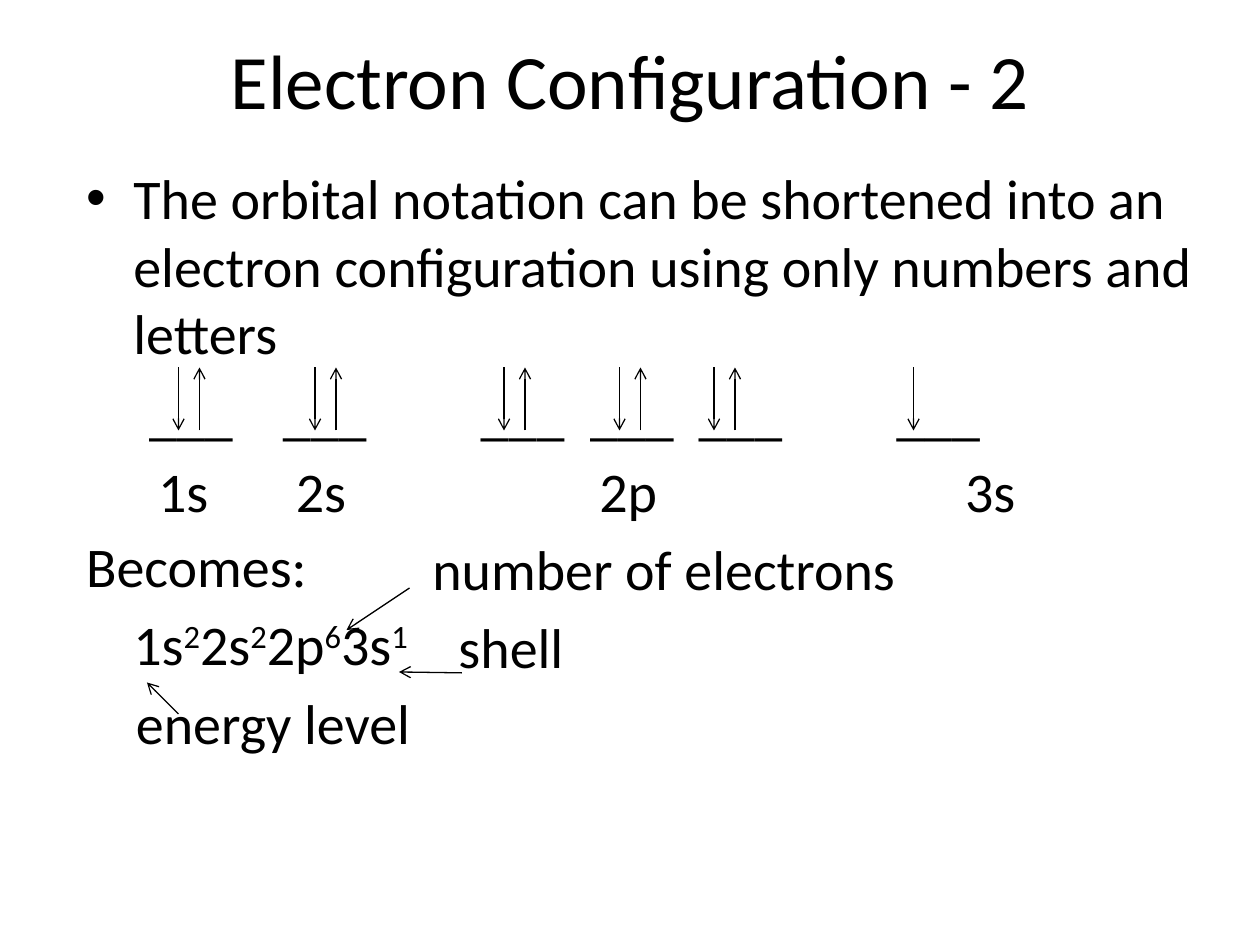
from dataclasses import dataclass

from lxml.etree import SubElement
from pptx import Presentation
from pptx.dml.color import RGBColor
from pptx.enum.shapes import MSO_CONNECTOR
from pptx.enum.text import MSO_AUTO_SIZE
from pptx.oxml.ns import qn
from pptx.util import Pt


@dataclass(frozen=True)
class Theme:
    font: str = "Calibri"
    ink: RGBColor = RGBColor(0, 0, 0)
    title: Pt = Pt(44)
    body: Pt = Pt(32)
    line: Pt = Pt(0.75)


theme = Theme()


def add_run(p, text, size, superscript=False):
    r = p.add_run()
    r.text = text
    r.font.name = theme.font
    r.font.size = size
    r.font.color.rgb = theme.ink
    if superscript:
        r._r.get_or_add_rPr().set("baseline", "30000")


def add_arrow(shapes, x1, y1, x2, y2):
    sp = shapes.add_connector(MSO_CONNECTOR.STRAIGHT, Pt(x1), Pt(y1), Pt(x2), Pt(y2))
    sp.line.color.rgb = theme.ink
    sp.line.width = theme.line
    SubElement(sp.line._get_or_add_ln(), qn("a:tailEnd"), type="arrow")
    SubElement(sp._element.spPr, qn("a:effectLst"))


prs = Presentation()
prs.slide_width, prs.slide_height = Pt(720), Pt(540)
s = prs.slides.add_slide(prs.slide_layouts[1])

title = s.shapes.title
title.left, title.top, title.width, title.height = Pt(36), Pt(0), Pt(648), Pt(90)
add_run(title.text_frame.paragraphs[0], "Electron Configuration - 2", theme.title)

body = s.placeholders[1]
body.left, body.top, body.width, body.height = Pt(42), Pt(90), Pt(648), Pt(438)
tf = body.text_frame
tf.auto_size = MSO_AUTO_SIZE.NONE
add_run(
    tf.paragraphs[0],
    "The orbital notation can be shortened into an electron configuration "
    "using only numbers and letters",
    theme.body,
)

diagram_gap = 94.7
body_lines = [
    (0, diagram_gap, ["Becomes:"]),
    (27, None, ["1s", "2", "2s", "2", "2p", "6", "3s", "1"]),
    (28.5, None, ["energy level"]),
]
for margin, space_before, parts in body_lines:
    p = tf.add_paragraph()
    if space_before:
        p.space_before = Pt(space_before)
    pPr = p._p.get_or_add_pPr()
    pPr.set("marL", str(Pt(margin)))
    pPr.set("indent", "0")
    SubElement(pPr, qn("a:buNone"))
    for i, part in enumerate(parts):
        add_run(p, part, theme.body, superscript=i % 2 == 1)

first_row, row_pitch = 216.3, 44.6
blanks = [(x, 0, 60, "___") for x in (85.2, 161.7, 274.7, 337.2, 399.2, 512.2)]
orbitals = [(90.3, 1, 60, "1s"), (169, 1, 60, "2s"), (342.5, 1, 60, "2p"), (551.5, 1, 60, "3s")]
callouts = [(247, 2, 300, "number of electrons"), (262, 3, 100, "shell")]
for x, row, width, text in blanks + orbitals + callouts:
    top = first_row + row * row_pitch
    sp = s.shapes.add_textbox(Pt(x), Pt(top), Pt(width), Pt(39))
    tf = sp.text_frame
    tf.word_wrap = True
    tf.margin_left = tf.margin_right = tf.margin_top = tf.margin_bottom = 0
    add_run(tf.paragraphs[0], text, theme.body)

electrons = s.shapes.add_group_shape()
arrow_top, arrow_bottom, pair_gap = 210, 246, 12
for x, count in [(102, 2), (180, 2), (288, 2), (354, 2), (408, 2), (522, 1)]:
    add_arrow(electrons.shapes, x, arrow_top, x, arrow_bottom)
    if count == 2:
        add_arrow(electrons.shapes, x + pair_gap, arrow_bottom, x + pair_gap, arrow_top)

label_arrows = [
    (102, 408, 84, 390),
    (264, 384.5, 228, 384),
    (234, 336, 198, 360),
]
for ends in label_arrows:
    add_arrow(s.shapes, *ends)

prs.save("out.pptx")
